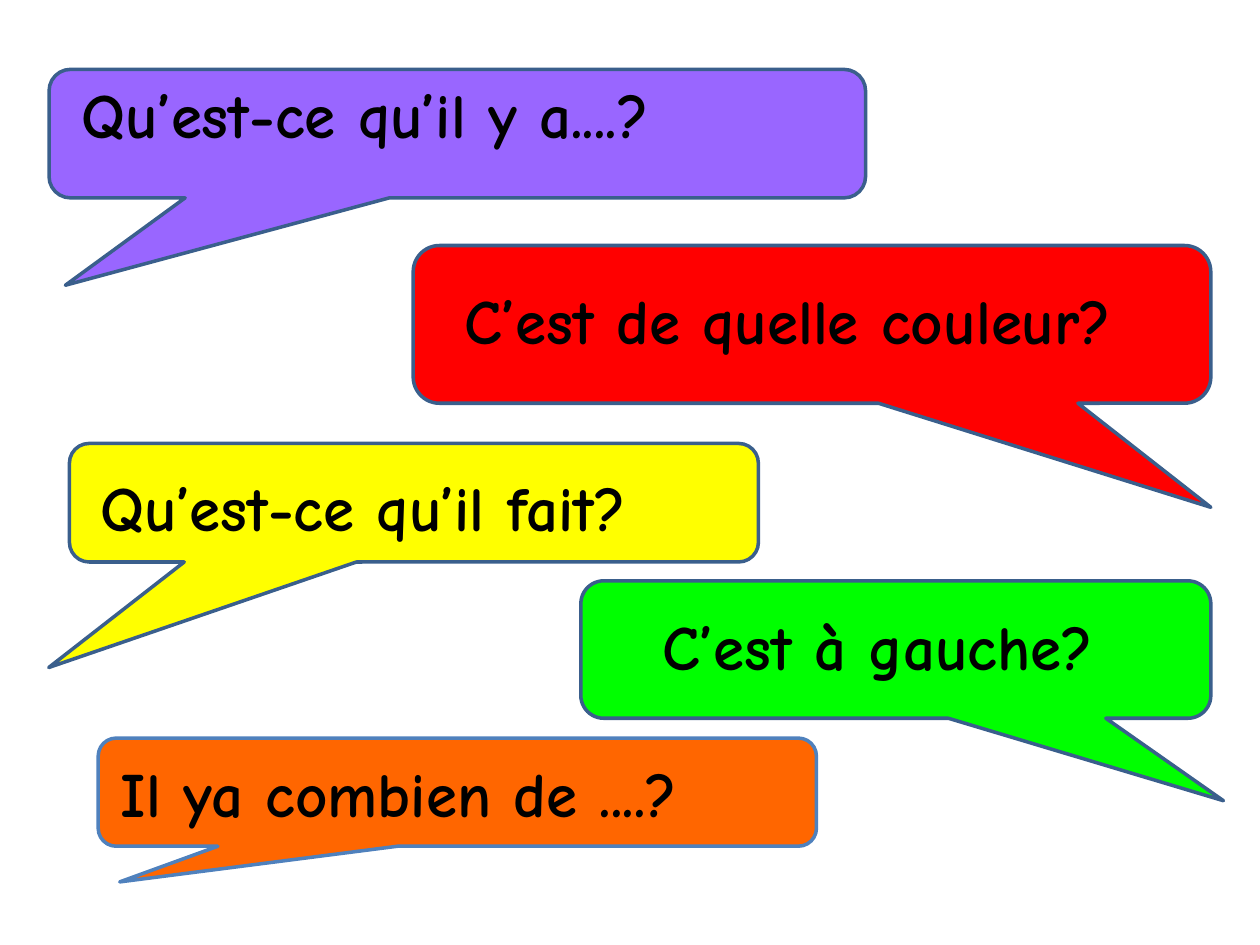
from pptx import Presentation
from pptx.dml.color import RGBColor
from pptx.enum.shapes import MSO_SHAPE as Shape
from pptx.enum.text import MSO_AUTO_SIZE as AutoSize
from pptx.util import Cm, Pt

COLORS = {
    "purple": "9966FF", "red": "FF0000", "yellow": "FFFF00",
    "green": "00FF00", "orange": "FF6600",
    "navy": "3A5F8C", "blue": "4F81BD", "text": "000000",
}
FONT = "Comic Neue"
TEXT_HEIGHT = 1.8

# Question, fill, outline, bubble box, tail tip (share of box, from its centre),
# text offset inside the bubble and text width; lengths in cm
BUBBLES = [
    ("Qu’est-ce qu’il fait?", "yellow", "navy",
     (1.4, 8.94, 13.89, 2.39), (-0.53, 1.39), (0.38, 0.38, 13.21)),
    ("C’est de quelle couleur?", "red", "navy",
     (8.33, 4.95, 16.08, 3.18), (0.5, 1.16), (0.79, 0.61, 15.24)),
    ("Qu’est-ce qu’il y a....?", "purple", "navy",
     (0.99, 1.4, 16.46, 2.59), (-0.48, 1.18), (0.41, 0, 15.09)),
    ("C’est à gauche?", "green", "navy",
     (11.71, 11.71, 12.7, 2.77), (0.52, 1.1), (1.4, 0.41, 10.26)),
    ("Il ya combien de ....?", "orange", "blue",
     (1.98, 14.88, 14.48, 2.18), (-0.47, 0.83), (0.2, 0.2, 14.48)),
]


def color(name):
    return RGBColor.from_string(COLORS[name])


def add_bubble(s, question, fill, outline, box, tail, text_area):
    # Callout shape
    sp = s.shapes.add_shape(Shape.ROUNDED_RECTANGULAR_CALLOUT, *map(Cm, box))
    sp.shadow.inherit = False
    sp.adjustments[0], sp.adjustments[1] = tail
    sp.fill.solid()
    sp.fill.fore_color.rgb = color(fill)
    sp.line.color.rgb = color(outline)
    sp.line.width = Pt(2)

    # Question, placed from the bubble's top left corner
    dx, dy, width = text_area
    left, top = box[:2]
    tb = s.shapes.add_textbox(Cm(left + dx), Cm(top + dy), Cm(width), Cm(TEXT_HEIGHT))
    tf = tb.text_frame
    tf.word_wrap = True
    tf.auto_size = AutoSize.SHAPE_TO_FIT_TEXT
    r = tf.paragraphs[0].add_run()
    r.text = question
    r.font.name = FONT
    r.font.size = Pt(36)
    r.font.bold = True
    r.font.color.rgb = color("text")


def main():
    prs = Presentation()
    prs.slide_width, prs.slide_height = Cm(25.4), Cm(19.05)
    s = prs.slides.add_slide(prs.slide_layouts[6])
    for bubble in BUBBLES:
        add_bubble(s, *bubble)
    prs.save("out.pptx")


if __name__ == "__main__":
    main()
